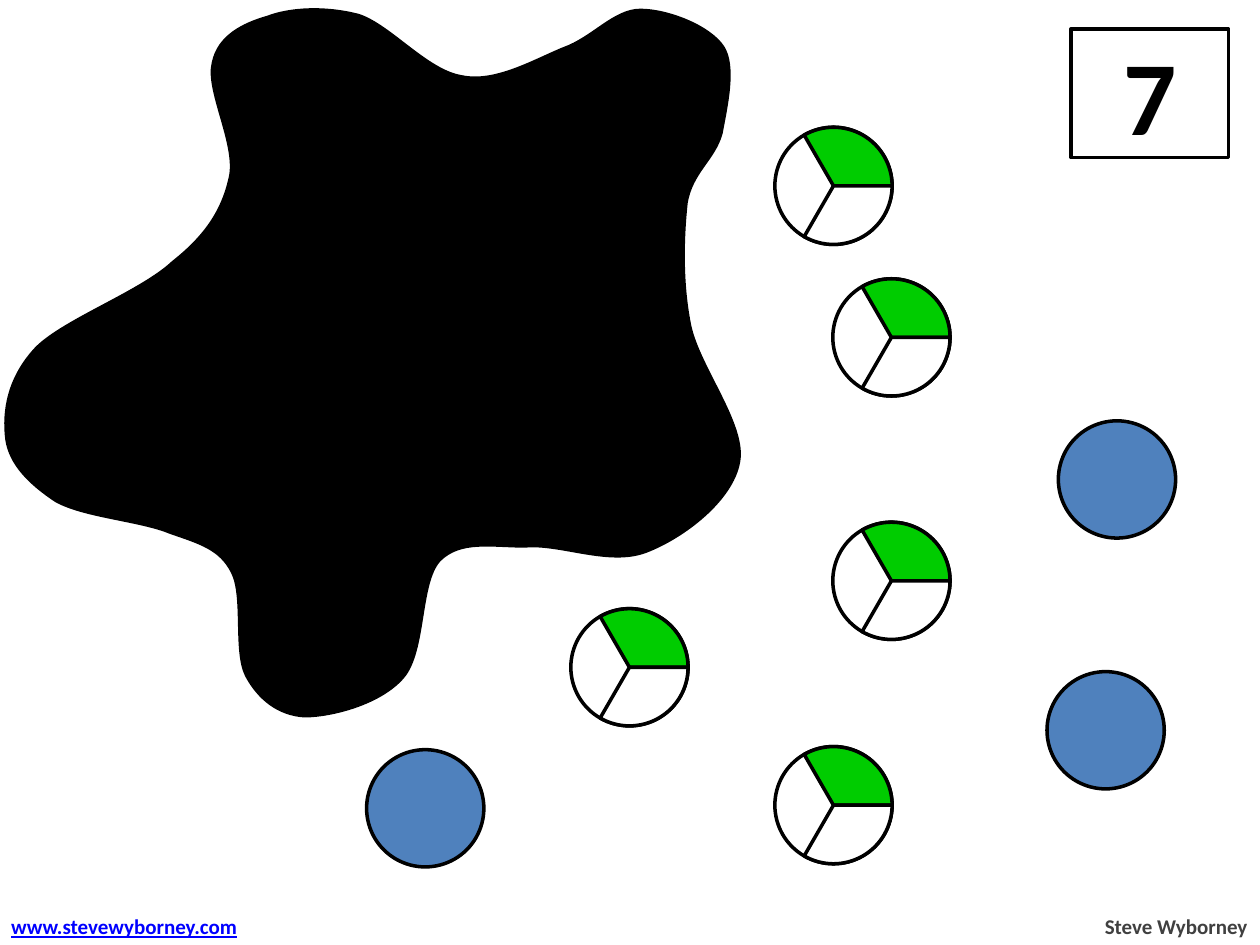
from pptx import Presentation
from pptx.dml.color import RGBColor
from pptx.enum.shapes import MSO_SHAPE
from pptx.enum.text import MSO_ANCHOR, MSO_AUTO_SIZE, PP_ALIGN
from pptx.oxml.ns import qn
from pptx.util import Pt

OVAL, PIE = MSO_SHAPE.OVAL, MSO_SHAPE.PIE
LEFT, CENTER, RIGHT = PP_ALIGN.LEFT, PP_ALIGN.CENTER, PP_ALIGN.RIGHT
MIDDLE = MSO_ANCHOR.MIDDLE
FIXED, FIT_TEXT = MSO_AUTO_SIZE.NONE, MSO_AUTO_SIZE.SHAPE_TO_FIT_TEXT

THEME = {
    "font": "Calibri",
    "number_size": Pt(60),
    "footer_size": Pt(12),
    "line_width": Pt(2),
    "ink": RGBColor(0, 0, 0),
    "paper": RGBColor(255, 255, 255),
    "whole": RGBColor(0x4F, 0x81, 0xBD),
    "third": RGBColor(0, 0xCC, 0),
    "credit": RGBColor(0x40, 0x40, 0x40),
    "web": RGBColor(0, 0, 255),
}


def paint(shape, fill):
    """Solid fill with the black outline shared by every shape."""
    shape.fill.solid()
    shape.fill.fore_color.rgb = fill
    shape.line.color.rgb = THEME["ink"]
    shape.line.width = THEME["line_width"]


def write(shape, text, color, align, **font_format):
    """Set the only paragraph of a shape in bold theme type."""
    line = shape.text_frame.paragraphs[0]
    line.alignment = align
    run = line.add_run()
    run.text = text
    run.font.color.rgb = color
    for key, value in {"name": THEME["font"], "bold": True, **font_format}.items():
        setattr(run.font, key, value)


deck = Presentation()
deck.slide_width, deck.slide_height = Pt(720), Pt(540)
slide = deck.slides.add_slide(deck.slide_layouts[5])

# Slide number in its box
number = slide.shapes.title
number.left, number.top, number.width, number.height = Pt(612), Pt(16.5), Pt(90), Pt(73.5)
paint(number, THEME["paper"])
number.text_frame.auto_size = FIXED
number.text_frame.vertical_anchor = MIDDLE
write(number, "7", THEME["ink"], CENTER, size=THEME["number_size"])

# Footer: author at the right, address at the left
for left, width, text, color, align, underline in [
    (623.5, 96.5, "Steve Wyborney", THEME["credit"], RIGHT, False),
    (-0.75, 147.5, "www.stevewyborney.com", THEME["web"], LEFT, True),
]:
    footer = slide.shapes.add_textbox(Pt(left), Pt(518.4), Pt(width), Pt(21.6))
    footer.text_frame.word_wrap = False
    footer.text_frame.auto_size = FIT_TEXT
    write(footer, text, color, align, size=THEME["footer_size"], underline=underline)

# Whole circles
DIAMETER = Pt(67)
for left, top in [(604.8, 240.5), (209.5, 428.4), (598.3, 383.8)]:
    whole = slide.shapes.add_shape(OVAL, Pt(left), Pt(top), DIAMETER, DIAMETER)
    whole.shadow.inherit = False
    paint(whole, THEME["whole"])

# Circles cut in thirds, with the upper right third shaded
THIRD_TURN = 72  # 120 degrees, in units of 100000/60000 degree
LAYERS = [(OVAL, 0, THEME["paper"]), (PIE, 240, THEME["third"]), (PIE, 0, THEME["paper"])]
for left, top in [(326.2, 347.8), (442.8, 72.7), (475.9, 159.3), (475.9, 298.4), (442.8, 426.6)]:
    thirds = slide.shapes.add_group_shape()
    for preset, rotation, fill in LAYERS:
        layer = thirds.shapes.add_shape(preset, Pt(left), Pt(top), DIAMETER, DIAMETER)
        layer.shadow.inherit = False
        layer.rotation = rotation
        if preset == PIE:
            layer.adjustments[0] = 0
            layer.adjustments[1] = THIRD_TURN
        paint(layer, fill)

# Ink splat: each row is one curve, as two handles and an end point
SPLAT_START = (32, 286)
SPLAT_CURVES = [
    [(17, 276), (6, 265), (4, 251)],
    [(2, 235), (5, 216), (21, 199)],
    [(37, 183), (81, 167), (99, 150)],
    [(118, 135), (128, 120), (132, 100)],
    [(135, 81), (118, 51), (122, 36)],
    [(125, 21), (139, 14), (153, 10)],
    [(166, 5), (186, 4), (205, 9)],
    [(223, 15), (244, 41), (264, 44)],
    [(283, 48), (305, 35), (322, 28)],
    [(339, 22), (351, 6), (366, 6)],
    [(381, 6), (405, 15), (413, 27)],
    [(420, 38), (415, 60), (412, 76)],
    [(408, 91), (395, 98), (392, 116)],
    [(390, 135), (389, 161), (394, 186)],
    [(399, 210), (426, 243), (422, 264)],
    [(418, 286), (390, 307), (369, 315)],
    [(348, 323), (320, 310), (300, 312)],
    [(281, 312), (263, 308), (251, 320)],
    [(239, 333), (243, 372), (230, 387)],
    [(217, 402), (189, 409), (174, 409)],
    [(159, 408), (148, 399), (141, 386)],
    [(134, 372), (140, 341), (133, 327)],
    [(126, 313), (114, 310), (97, 304)],
    [(80, 297), (48, 295), SPLAT_START],
]
outline = slide.shapes.build_freeform(*SPLAT_START, scale=Pt(1))
outline.add_line_segments([point for curve in SPLAT_CURVES for point in curve], close=True)
splat = outline.convert_to_shape()
splat.shadow.inherit = False
paint(splat, THEME["ink"])

# Join every three straight segments into one Bézier curve
segments = list(splat._element.iter(qn("a:lnTo")))
for start in range(0, len(SPLAT_CURVES) * 3, 3):
    curve, *others = segments[start:start + 3]
    curve.tag = qn("a:cubicBezTo")
    for segment in others:
        curve.append(segment[0])
        segment.getparent().remove(segment)

deck.save("out.pptx")
